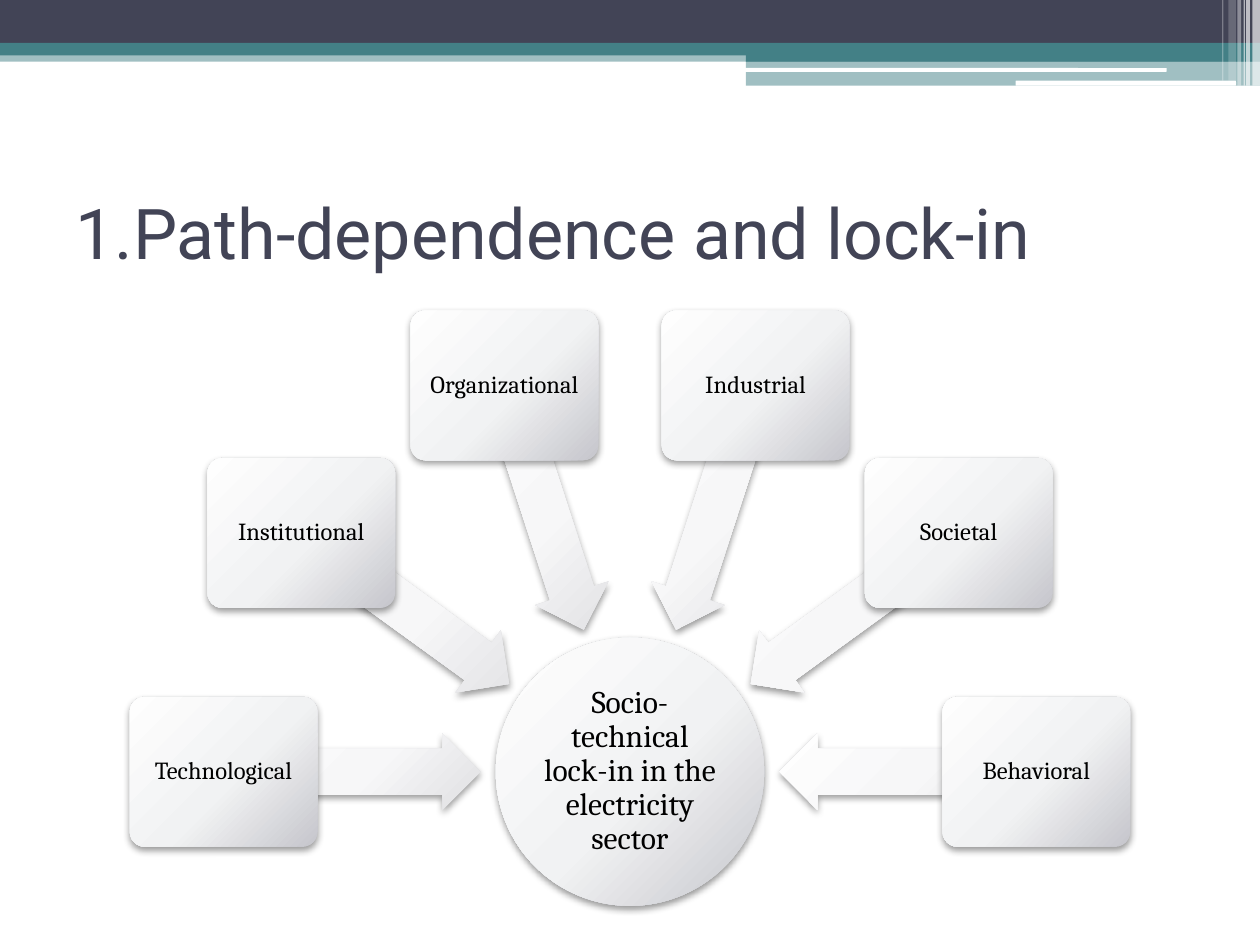
"""Build a slide on path dependence: six forces pointing at one lock-in hub."""
from dataclasses import dataclass
from math import cos, radians, sin

from lxml import etree
from pptx import Presentation, util as u
from pptx.dml.color import RGBColor
from pptx.enum import shapes, text
from pptx.oxml import parse_xml
from pptx.oxml.ns import nsdecls, qn

KIND = shapes.MSO_SHAPE


@dataclass(frozen=True)
class Theme:
    navy: str = "424456"
    teal: str = "438086"
    white: str = "FFFFFF"
    black: str = "000000"
    body_blend: tuple = ((0, "FEFEFE"), (55, "F1F2F3"), (100, "C6C6CC"))
    arrow_blend: tuple = ((0, "FEFEFE"), (55, "F7F7F8"), (100, "DFDFE2"))
    heading_font: str = "Roboto"
    body_font: str = "Cambria"
    heading_size: int = 40
    hub_size: int = 18
    force_size: int = 14


class Deck:
    def __init__(self, theme):
        self.theme = theme
        self.show = Presentation()
        self.show.slide_width, self.show.slide_height = u.Inches(10), u.Inches(7.5)
        self.column = self.show.slide_width / 100
        self.row = self.show.slide_height / 75
        self.slide = self.show.slides.add_slide(self.show.slide_layouts[6])

    def area(self, left, top, width, height):
        return (round(left * self.column), round(top * self.row),
                round(width * self.column), round(height * self.row))

    def plain(self, kind, area):
        figure = self.slide.shapes.add_shape(kind, *self.area(*area))
        figure.shadow.inherit = False
        figure.line.fill.background()
        return figure

    def bar(self, area, color, opacity=100, kind=KIND.RECTANGLE):
        bar = self.plain(kind, area)
        bar.fill.solid()
        bar.fill.fore_color.rgb = RGBColor.from_string(color)
        if opacity < 100:
            tint = bar._element.spPr.find(qn("a:solidFill")).find(qn("a:srgbClr"))
            etree.SubElement(tint, qn("a:alpha"), val=str(opacity * 1000))

    def raised(self, kind, center, size, blend, adjustments=(), rotation=0):
        (x, y), (width, height) = center, size
        figure = self.plain(kind, (x - width / 2, y - height / 2, width, height))
        figure.rotation = rotation
        for index, value in enumerate(adjustments):
            figure.adjustments[index] = value
        stops = "".join(f'<a:gs pos="{share * 1000}"><a:srgbClr val="{color}"/></a:gs>'
                        for share, color in blend)
        figure.fill.background()
        props = figure._element.spPr
        props.replace(props.find(qn("a:noFill")), parse_xml(
            f'<a:gradFill {nsdecls("a")} rotWithShape="1"><a:gsLst>{stops}</a:gsLst>'
            '<a:path path="circle"><a:fillToRect l="-40000" t="-90000" r="140000" '
            'b="190000"/></a:path></a:gradFill>'))
        props.find(qn("a:effectLst")).append(parse_xml(
            f'<a:outerShdw {nsdecls("a")} blurRad="{u.Pt(4.1)}" dist="{u.Pt(2)}" '
            f'dir="5400000" rotWithShape="0"><a:srgbClr val="{self.theme.black}">'
            '<a:alpha val="40000"/></a:srgbClr></a:outerShdw>'))
        return figure

    def wording(self, holder, words, font, size, color, align, inset=None, spacing=None):
        frame = holder.text_frame
        frame.word_wrap = True
        frame.vertical_anchor = text.MSO_ANCHOR.MIDDLE
        if inset is not None:
            frame.margin_left = frame.margin_right = u.Inches(inset)
            frame.margin_top = frame.margin_bottom = u.Inches(inset)
        paragraph = frame.paragraphs[0]
        paragraph.alignment = align
        paragraph.line_spacing = spacing
        run = paragraph.add_run()
        run.text = words
        run.font.name, run.font.size = font, u.Pt(size)
        run.font.color.rgb = RGBColor.from_string(color)

    def heading(self, area, words):
        box = self.slide.shapes.add_textbox(*self.area(*area))
        self.wording(box, words, self.theme.heading_font, self.theme.heading_size,
                     self.theme.navy, text.PP_ALIGN.LEFT)

    def label(self, holder, words, size, inset):
        self.wording(holder, words, self.theme.body_font, size, self.theme.black,
                     text.PP_ALIGN.CENTER, inset, 0.9)

    def hub(self, center, diameter, words):
        hub = self.raised(KIND.OVAL, center, (diameter, diameter), self.theme.body_blend)
        self.label(hub, words, self.theme.hub_size, 0.01)

    def force(self, center, angle, words):
        def along(radius):
            return (center[0] + radius * cos(radians(angle)),
                    center[1] + radius * sin(radians(angle)))

        self.raised(KIND.LEFT_ARROW, along(22.05), (20.4, 6.1), self.theme.arrow_blend,
                    (0.6, 0.5), angle)
        card = self.raised(KIND.ROUNDED_RECTANGLE, along(32.25), (14.9, 11.9),
                           self.theme.body_blend, (0.1,))
        self.label(card, words, self.theme.force_size, 0.03)


def main():
    theme = Theme()
    deck = Deck(theme)

    for area, color, opacity in (
        ((0, 4, 100, 0.9), theme.teal, 50),
        ((0, 0, 100, 3.4), theme.navy, 100),
        ((0, 3.4, 100, 1), theme.teal, 100),
        ((59.2, 3.9, 40.8, 1), theme.teal, 100),
        ((59.2, 4.8, 40.8, 2), theme.teal, 50),
    ):
        deck.bar(area, color, opacity)
    for area in ((59.1, 5.4, 33.5, 0.3), (80.6, 6.4, 17.5, 0.4)):
        deck.bar(area, theme.white, kind=KIND.ROUNDED_RECTANGLE)
    for left, width, height, opacity in (
        (99.4, 0.6, 6.8, 65), (98.9, 0.3, 6.8, 65), (98.7, 0.1, 6.8, 60),
        (98.2, 0.3, 6.8, 40), (97.5, 0.6, 6.4, 20), (97, 0.1, 6.4, 30),
    ):
        deck.bar((left, 0, width, height), theme.white, opacity)

    deck.heading((5, 12.5, 90, 11.7), "1.Path-dependence and lock-in")

    center = (50, 61.25)
    deck.hub(center, 21.3, "Socio-technical lock-in in the electricity sector")
    forces = ("Technological", "Institutional", "Organizational",
              "Industrial", "Societal", "Behavioral")
    for position, name in enumerate(forces):
        deck.force(center, 180 + position * 180 / (len(forces) - 1), name)

    deck.show.save("out.pptx")


if __name__ == "__main__":
    main()
